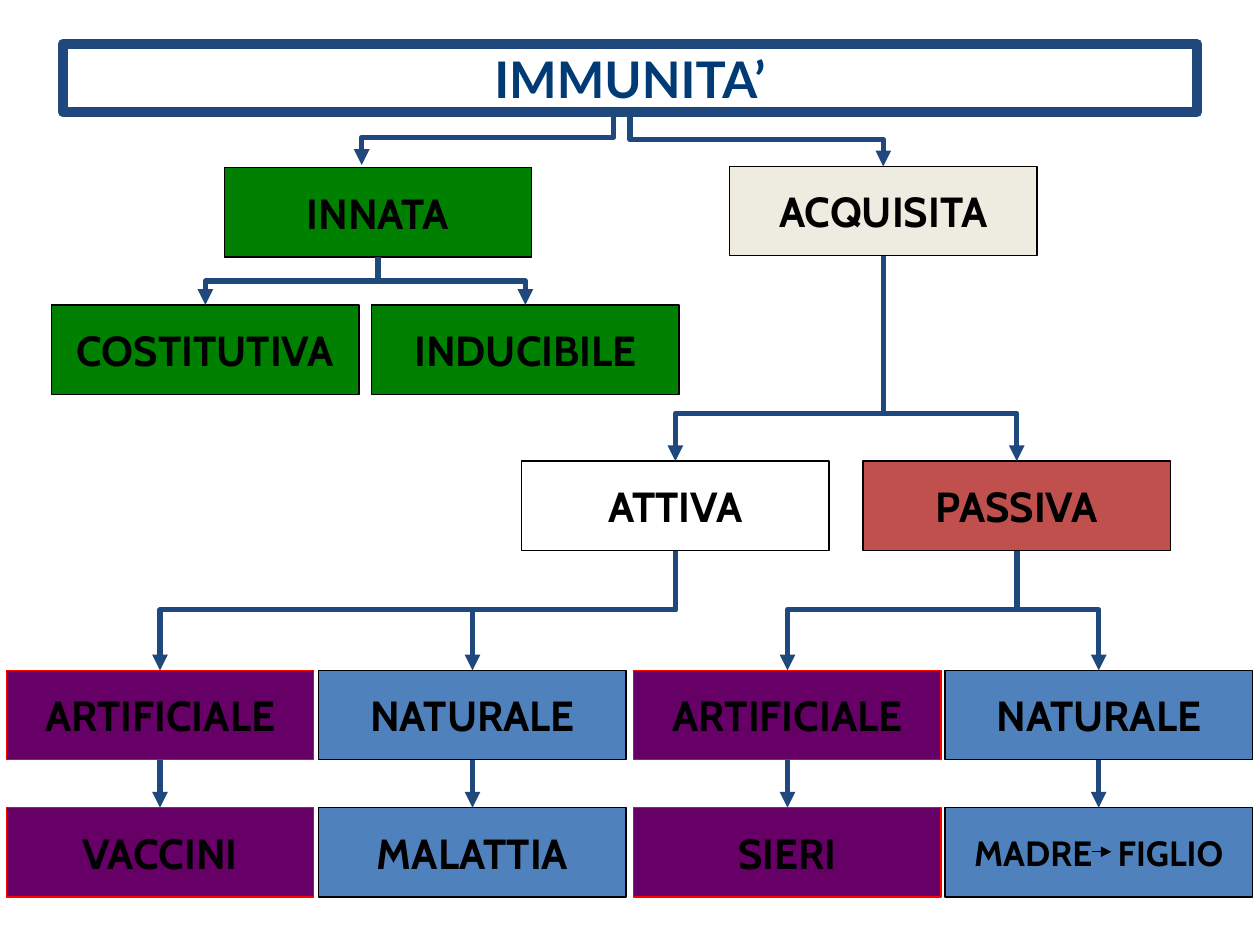
from dataclasses import dataclass

from lxml import etree
from pptx import Presentation
from pptx import util as u
from pptx.dml.color import RGBColor
from pptx.enum import shapes, text
from pptx.oxml.ns import qn


@dataclass(frozen=True)
class Theme:
    navy: str = "1F497D"
    title: str = "003B76"
    black: str = "000000"
    white: str = "FFFFFF"
    red: str = "FF0000"
    green: str = "008000"
    cream: str = "EEECE1"
    brick: str = "C0504D"
    purple: str = "660066"
    blue: str = "4F81BD"
    title_font: str = "Lato"
    box_font: str = "Cabin"
    title_size: float = 28.8
    box_size: float = 24
    small_size: float = 20
    frame: float = 6
    thick: float = 3
    thin: float = 0.75


BOX_W, BOX_H = 2.44, 0.71


class Diagram:
    def __init__(self, slide, theme):
        self.s = slide
        self.t = theme

    def rect(self, label, x, y, w, h, line, width, font, size, color, fill=None):
        sp = self.s.shapes.add_shape(
            shapes.MSO_SHAPE.RECTANGLE, *map(u.Inches, (x, y, w, h)))
        sp.shadow.inherit = False
        if fill:
            sp.fill.solid()
            sp.fill.fore_color.rgb = RGBColor.from_string(fill)
        else:
            sp.fill.background()
        sp.line.color.rgb = RGBColor.from_string(line)
        sp.line.width = u.Pt(width)
        tf = sp.text_frame
        tf.text = label
        tf.word_wrap = False
        tf.vertical_anchor = text.MSO_ANCHOR.MIDDLE
        p = tf.paragraphs[0]
        p.alignment = text.PP_ALIGN.CENTER
        f = p.runs[0].font
        f.name, f.size, f.bold = font, u.Pt(size), True
        f.color.rgb = RGBColor.from_string(color)
        return sp

    def title(self, label, x, y, w, h):
        t = self.t
        sp = self.rect(label, x, y, w, h, t.navy, t.frame,
                       t.title_font, t.title_size, t.title)
        etree.SubElement(sp.line._get_or_add_ln(), qn("a:round"))
        return sp

    def box(self, label, x, y, fill, line=None, size=None):
        t = self.t
        return self.rect(label, x, y, BOX_W, BOX_H, line or t.black, t.thin,
                         t.box_font, size or t.box_size, t.black, fill)

    def arrow(self, kind, x1, y1, x2, y2, color=None, width=None):
        c = self.s.shapes.add_connector(
            kind, *(u.Inches(v) for v in (x1, y1, x2, y2)))
        c.line.color.rgb = RGBColor.from_string(color or self.t.navy)
        c.line.width = u.Pt(width or self.t.thick)
        etree.SubElement(c.line._get_or_add_ln(), qn("a:tailEnd"), type="triangle")
        etree.SubElement(c._element.spPr, qn("a:effectLst"))
        return c

    def elbow(self, x1, y1, x2, y2, bend_y):
        """Down, across at bend_y, then down: a bent connector turned upright."""
        cx, cy = (x1 + x2) / 2, (y1 + y2) / 2
        side = 1 if x2 < x1 else -1
        half_w, half_h = side * (y2 - y1) / 2, abs(x2 - x1) / 2
        c = self.arrow(shapes.MSO_CONNECTOR.ELBOW, cx - half_w, cy - half_h,
                       cx + half_w, cy + half_h)
        spPr = c._element.spPr
        spPr.find(qn("a:xfrm")).set("rot", str((90 if side > 0 else 270) * 60000))
        guides = spPr.find(qn("a:prstGeom")).find(qn("a:avLst"))
        adj = round((bend_y - y1) / (y2 - y1) * 100000)
        etree.SubElement(guides, qn("a:gd"), name="adj1", fmla=f"val {adj}")

    def branch(self, parent, children, bend_y):
        def middle(sp):
            return (sp.left + sp.width / 2) / u.Inches(1)

        y1 = (parent.top + parent.height) / u.Inches(1)
        for child in children:
            self.elbow(middle(parent), y1, middle(child),
                       child.top / u.Inches(1), bend_y)

    def link(self, upper, lower):
        c = self.arrow(shapes.MSO_CONNECTOR.STRAIGHT, 0, 0, 1, 1)
        c.begin_connect(upper, 2)
        c.end_connect(lower, 0)


def main():
    prs = Presentation()
    prs.slide_width, prs.slide_height = u.Inches(10), u.Inches(7.5)
    t = Theme()
    d = Diagram(prs.slides.add_slide(prs.slide_layouts[6]), t)

    # Title and the two main kinds
    d.title("IMMUNITA’", 0.5, 0.35, 9, 0.54)
    innate = d.box("INNATA", 1.78, 1.33, t.green)
    acquired = d.box("ACQUISITA", 5.79, 1.32, t.cream)
    d.elbow(4.87, 0.91, 2.87, 1.31, 1.09)
    d.elbow(5, 0.9, 7.01, 1.32, 1.11)

    # Innate branch
    innate_kinds = [d.box("COSTITUTIVA", 0.41, 2.42, t.green),
                    d.box("INDUCIBILE", 2.95, 2.42, t.green)]
    d.branch(innate, innate_kinds, 2.23)

    # Acquired branch
    active = d.box("ATTIVA", 4.14, 3.66, t.white)
    passive = d.box("PASSIVA", 6.85, 3.66, t.brick)
    d.branch(acquired, [active, passive], 3.28)

    # Bottom columns: origin above, example below
    columns = [
        (0.05, "ARTIFICIALE", "VACCINI"),
        (2.53, "NATURALE", "MALATTIA"),
        (5.03, "ARTIFICIALE", "SIERI"),
        (7.5, "NATURALE", "MADRE"),
    ]
    origins, examples = [], []
    for x, origin, example in columns:
        fill, line = ((t.purple, t.red) if origin == "ARTIFICIALE"
                      else (t.blue, t.black))
        size = t.small_size if example == "MADRE" else t.box_size
        origins.append(d.box(origin, x, 5.32, fill, line))
        examples.append(d.box(example, x, 6.41, fill, line, size))
        d.link(origins[-1], examples[-1])
    d.branch(active, origins[:2], 4.84)
    d.branch(passive, origins[2:], 4.84)

    # Small arrow from mother to child, in a widened word gap
    p = examples[-1].text_frame.paragraphs[0]
    for part in (" ", "FIGLIO"):
        r = p.add_run()
        r.text = part
        r.font.name, r.font.size, r.font.bold = t.box_font, u.Pt(t.small_size), True
        r.font.color.rgb = RGBColor.from_string(t.black)
    p.runs[1].font._element.set("spc", "1000")
    d.arrow(shapes.MSO_CONNECTOR.STRAIGHT, 8.67, 6.76, 8.82, 6.76, t.black, t.thin)

    prs.save("out.pptx")


if __name__ == "__main__":
    main()
